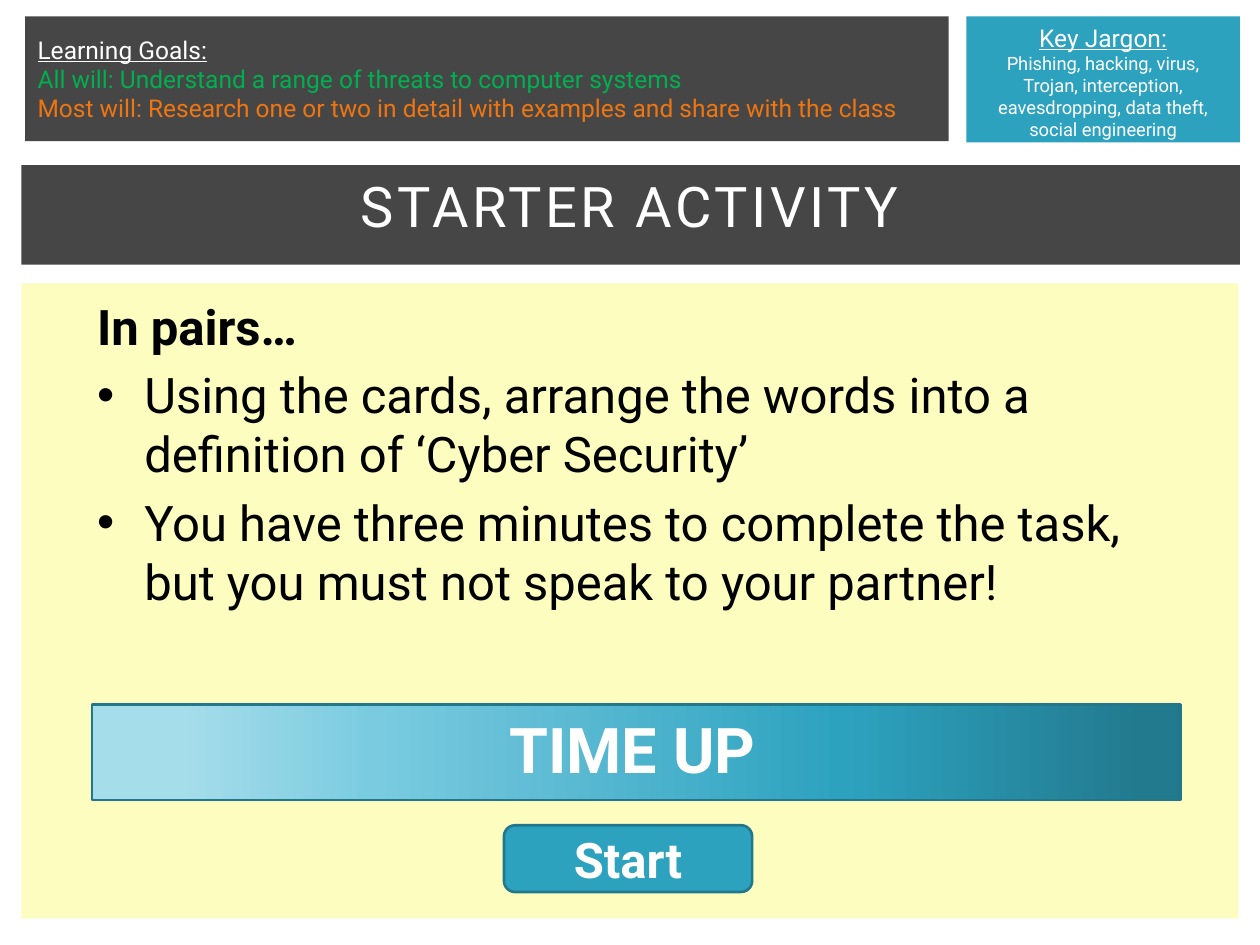
from copy import deepcopy

from lxml.etree import SubElement
from pptx import Presentation
from pptx.dml.color import RGBColor
from pptx.enum.shapes import MSO_SHAPE as Shape
from pptx.enum.text import MSO_ANCHOR as Anchor, MSO_AUTO_SIZE as AutoSize, PP_ALIGN as Align
from pptx.oxml.ns import qn
from pptx.util import Inches, Pt

WHITE = RGBColor(0xFF, 0xFF, 0xFF)
BLACK = RGBColor(0x00, 0x00, 0x00)
GREY = RGBColor(0x46, 0x46, 0x46)
TEAL = RGBColor(0x2D, 0xA2, 0xBF)
DARK_TEAL = RGBColor(0x21, 0x78, 0x8D)
CREAM = RGBColor(0xFC, 0xFD, 0xBF)
GREEN = RGBColor(0x00, 0xB0, 0x50)
ORANGE = RGBColor(0xEF, 0x75, 0x11)
BAR_STOPS = [
    (0.08, RGBColor(0xA6, 0xDD, 0xEA)),
    (0.26, RGBColor(0x7A, 0xCB, 0xE0)),
    (0.69, TEAL),
    (0.97, RGBColor(0x22, 0x7A, 0x8F)),
]

deck = Presentation()
deck.slide_width, deck.slide_height = Inches(10), Inches(7.5)
page = deck.slides.add_slide(deck.slide_layouts[1])


def add_box(left, top, width, height, fill=None, line=None, kind=Shape.RECTANGLE):
    box = page.shapes.add_shape(kind, Inches(left), Inches(top), Inches(width), Inches(height))
    box.shadow.inherit = False
    if fill is None:
        box.fill.background()
    else:
        box.fill.solid()
        box.fill.fore_color.rgb = fill
    if line is None:
        box.line.fill.background()
    else:
        box.line.color.rgb = line
        box.line.width = Pt(1.5)
    return box


def style(font, size, color, bold=False, underline=None):
    font.name, font.size, font.bold, font.underline = "Roboto", Pt(size), bold, underline
    font.color.rgb = color


jargon = add_box(7.67, 0.13, 2.17, 1, TEAL)
jargon.text_frame.vertical_anchor = Anchor.TOP
para = jargon.text_frame.paragraphs[0]
para.alignment = Align.CENTER
span = para.add_run()
span.text = "Key Jargon:"
style(span.font, 14, WHITE, underline=True)
para.add_line_break()
span = para.add_run()
span.text = "Phishing, hacking, virus, Trojan, interception, eavesdropping, data theft, social engineering"
style(span.font, 10.5, WHITE)

goals = add_box(0.2, 0.13, 7.33, 0.99, GREY)
goals.text_frame.text = (
    "Learning Goals:\n"
    "All will: Understand a range of threats to computer systems\n"
    "Most will: Research one or two in detail with examples and share with the class"
)
for para, color, underline in zip(goals.text_frame.paragraphs, (WHITE, GREEN, ORANGE), (True, None, None)):
    para.alignment = Align.LEFT
    style(para.font, 14, color, underline=underline)

add_box(0.17, 1.31, 9.67, 0.79, GREY)
add_box(0.17, 2.25, 9.66, 5.04, CREAM)

title, body = page.placeholders
for holder, (left, top, width, height) in (
    (title, (0.17, 1.31, 9.66, 0.79)),
    (body, (0.67, 2.3, 8.62, 3.07)),
):
    holder.left, holder.top = Inches(left), Inches(top)
    holder.width, holder.height = Inches(width), Inches(height)
    holder.text_frame.auto_size = AutoSize.NONE
    holder.text_frame.vertical_anchor = Anchor.TOP
    page.shapes._spTree.append(holder._element)

title.text_frame.text = "STARTER ACTIVITY"
para = title.text_frame.paragraphs[0]
para.alignment = Align.CENTER
style(para.font, 32, WHITE)
para.runs[0].font._element.set("spc", "200")

body.text_frame.text = (
    "In pairs…\n"
    "Using the cards, arrange the words into a definition of ‘Cyber Security’\n"
    "You have three minutes to complete the task, but you must not speak to your partner!"
)
heading, *tasks = body.text_frame.paragraphs
style(heading.font, 28, BLACK, bold=True)
for para in tasks:
    style(para.font, 28, BLACK)
heading_props = heading._p.get_or_add_pPr()
heading_props.set("marL", "0")
heading_props.set("indent", "0")
heading_props.insert(0, SubElement(heading_props, qn("a:buNone")))

add_box(0.75, 5.59, 8.62, 0.76, line=DARK_TEAL)
timer_bar = add_box(0.73, 5.59, 8.62, 0.76, TEAL, DARK_TEAL)
timer_bar.fill.gradient()
timer_bar.fill.gradient_angle = 0
stop_list = timer_bar._element.spPr.find(qn("a:gradFill")).find(qn("a:gsLst"))
while len(stop_list) < len(BAR_STOPS):
    stop_list.append(deepcopy(stop_list[0]))
for stop, (position, color) in zip(timer_bar.fill.gradient_stops, BAR_STOPS):
    stop.position = position
    stop.color.rgb = color

time_up = page.shapes.add_textbox(Inches(0.69), Inches(5.59), Inches(8.66), Inches(0.71))
time_up.text_frame.word_wrap = True
time_up.text_frame.auto_size = AutoSize.SHAPE_TO_FIT_TEXT
start = add_box(4, 6.55, 1.97, 0.53, TEAL, DARK_TEAL, Shape.ROUNDED_RECTANGLE)
for box, text, size in ((time_up, "TIME UP", 36), (start, "Start", 28)):
    box.text_frame.text = text
    para = box.text_frame.paragraphs[0]
    para.alignment = Align.CENTER
    style(para.font, size, WHITE, bold=True)

deck.save("out.pptx")
